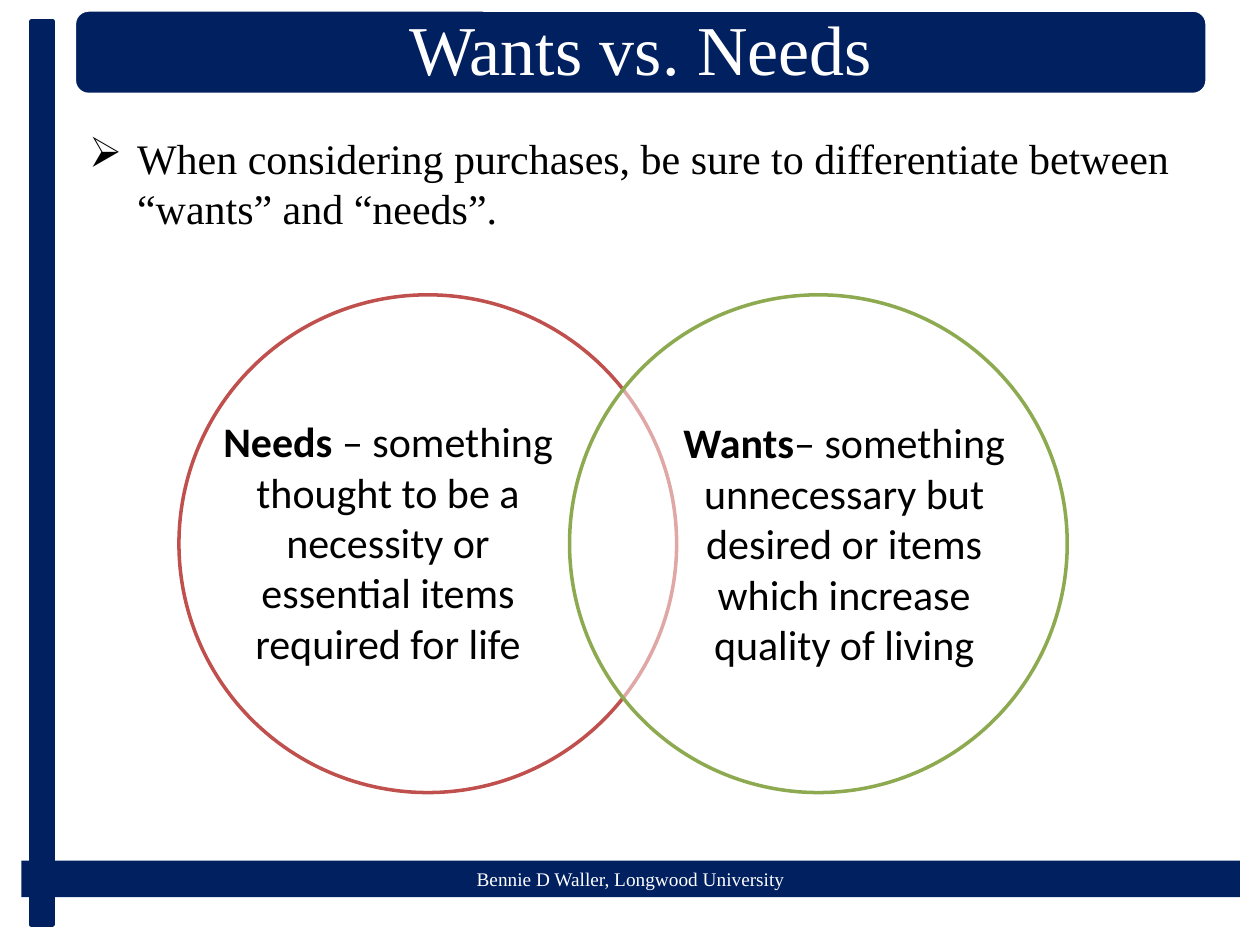
from pptx import Presentation
from pptx import util as u
from pptx.dml.color import RGBColor
from pptx.enum import shapes, text
from pptx.oxml.xmlchemy import OxmlElement

HUES = {"navy": "002060", "white": "FFFFFF", "black": "000000",
        "red": "C0504D", "green": "8DAA51"}
SERIF = "Times New Roman"
SANS = "Calibri"
KIND = shapes.MSO_SHAPE


def hue(name):
    return RGBColor.from_string(HUES[name])


def inches(box):
    return [u.Inches(n) for n in box]


def add_xml(parent, tag, **attrs):
    node = OxmlElement(tag)
    for key, value in attrs.items():
        node.set(key, str(value))
    parent.append(node)


def add_shape(slide, kind, box, fill, line=None, width=2):
    shape = slide.shapes.add_shape(kind, *inches(box))
    shape.shadow.inherit = False
    shape.fill.solid()
    shape.fill.fore_color.rgb = hue(fill)
    if line:
        shape.line.color.rgb = hue(line)
        shape.line.width = u.Pt(width)
    else:
        shape.line.fill.background()
    return shape


def add_ring(slide, left, line):
    ring = add_shape(slide, KIND.OVAL, (left, 2.34, 3.95, 3.95), "white", line)
    tint = ring.fill._xPr.find(".//{*}solidFill/{*}srgbClr")
    add_xml(tint, "a:alpha", val=50000)


def style(para, size, face, color, align=text.PP_ALIGN.CENTER):
    para.alignment = align
    para.font.size = u.Pt(size)
    para.font.name = face
    para.font.color.rgb = hue(color)


def add_text(slide, box):
    frame = slide.shapes.add_textbox(*inches(box)).text_frame
    frame.word_wrap = True
    return frame.paragraphs[0]


def add_term(slide, box, term, rest):
    para = add_text(slide, box)
    style(para, 24, SANS, "black")
    for words, bold in ((term, True), (rest, False)):
        run = para.add_run()
        run.text = words
        run.font.bold = bold


def add_bullet(slide, box, words):
    para = add_text(slide, box)
    para.text = words
    style(para, 24, SERIF, "black", text.PP_ALIGN.LEFT)
    props = para._p.get_or_add_pPr()
    props.set("marL", str(u.Inches(0.38)))
    props.set("indent", str(u.Inches(-0.38)))
    bullet = OxmlElement("a:buChar")
    bullet.set("char", "➢")
    props.insert_element_before(bullet, "a:tabLst", "a:defRPr", "a:extLst")


def add_footer(slide, words):
    bar = add_shape(slide, KIND.RECTANGLE, (0.17, 6.83, 9.67, 0.29), "navy")
    para = bar.text_frame.paragraphs[0]
    para.text = words
    style(para, 11, SERIF, "white")


def add_title(slide, words):
    add_shape(slide, KIND.ROUNDED_RECTANGLE, (0.59, 0.08, 8.99, 0.67),
              "navy", "white")
    title = slide.shapes.title
    title.left, title.top, title.width, title.height = inches(
        (0.62, 0.12, 8.93, 0.6))
    frame = title.text_frame
    frame.auto_size = text.MSO_AUTO_SIZE.NONE
    frame.vertical_anchor = text.MSO_ANCHOR.MIDDLE
    frame.margin_left = frame.margin_right = u.Inches(0.17)
    frame.margin_top = frame.margin_bottom = u.Inches(0.08)
    para = frame.paragraphs[0]
    para.text = words
    para.line_spacing = 0.9
    style(para, 40, SERIF, "white")
    slide.shapes._spTree.append(title._element)


def main():
    deck = Presentation()
    deck.slide_width, deck.slide_height = inches((10, 7.5))
    slide = deck.slides.add_slide(deck.slide_layouts[5])
    add_footer(slide, "Bennie D Waller, Longwood University")
    add_shape(slide, KIND.RECTANGLE, (0.25, 0.17, 0.17, 7.17),
              "navy", "navy", 2.5)
    add_ring(slide, 1.42, "red")
    add_ring(slide, 4.52, "green")
    add_term(slide, (1.58, 3.25, 3, 2.12), "Needs",
             " – something thought to be a necessity or essential items "
             "required for life")
    add_term(slide, (5.2, 3.26, 3, 2.12), "Wants",
             "– something unnecessary but desired or items which increase "
             "quality of living")
    add_title(slide, "Wants vs. Needs")
    add_bullet(slide, (0.61, 1, 9.17, 0.91),
               "When considering purchases, be sure to differentiate between "
               "“wants” and “needs”.")
    deck.save("out.pptx")


if __name__ == "__main__":
    main()
